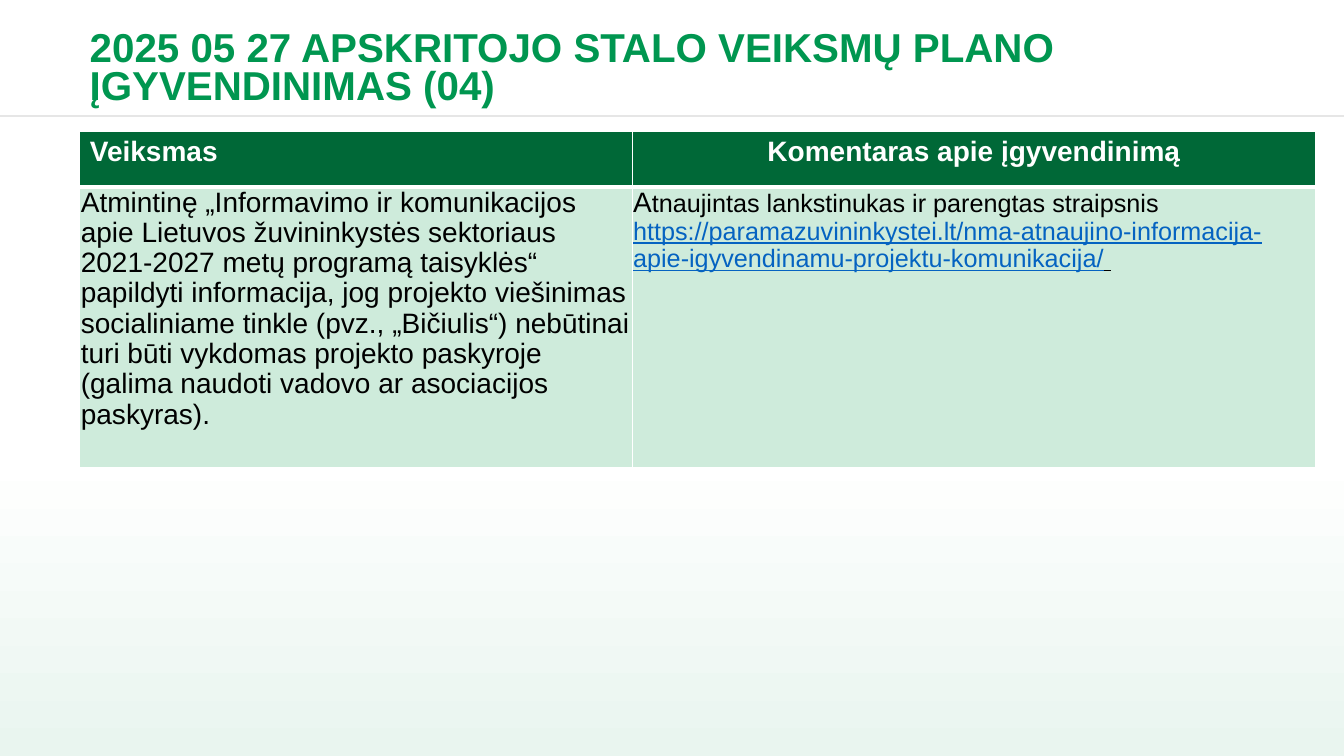
from dataclasses import dataclass

from lxml.etree import SubElement
from pptx import Presentation
from pptx.dml.color import RGBColor as RGB
from pptx.enum.shapes import MSO_CONNECTOR as CONN, MSO_SHAPE as SHAPE
from pptx.enum.text import MSO_ANCHOR as ANCHOR, PP_ALIGN as ALIGN
from pptx.oxml import parse_xml
from pptx.oxml.ns import nsdecls, qn
from pptx.util import Pt


@dataclass(frozen=True)
class Theme:
    font: str = "Arial"
    title: RGB = RGB(0x00, 0x96, 0x50)
    header: RGB = RGB(0x00, 0x68, 0x37)
    body: RGB = RGB(0xCE, 0xEB, 0xDB)
    tint: RGB = RGB(0xE9, 0xF5, 0xEF)
    rule: RGB = RGB(0xE6, 0xE6, 0xE6)
    link: RGB = RGB(0x05, 0x63, 0xC1)
    black: RGB = RGB(0, 0, 0)
    white: RGB = RGB(0xFF, 0xFF, 0xFF)
    title_size: float = 28.8
    text_size: float = 20
    note_size: float = 18


T = Theme()
WIDTH, HEIGHT = 960, 540

TITLE = "2025 05 27 APSKRITOJO STALO VEIKSMŲ PLANO ĮGYVENDINIMAS (04)"
HEADERS = [("Veiksmas", ALIGN.LEFT), ("Komentaras apie įgyvendinimą", ALIGN.CENTER)]
ACTION = (
    "Atmintinę „Informavimo ir komunikacijos apie Lietuvos žuvininkystės "
    "sektoriaus 2021-2027 metų programą taisyklės“ papildyti informacija, jog "
    "projekto viešinimas socialiniame tinkle (pvz., „Bičiulis“) nebūtinai turi "
    "būti vykdomas projekto paskyroje (galima naudoti vadovo ar asociacijos "
    "paskyras)."
)
URL = ("https://paramazuvininkystei.lt/nma-atnaujino-informacija-"
       "apie-igyvendinamu-projektu-komunikacija/")
# Each run: text, size, colour, underline
COMMENT = [
    ("A", T.text_size, T.black, False),
    ("tnaujintas lankstinukas ir parengtas straipsnis ", T.note_size, T.black, False),
    (URL, T.note_size, T.link, True),
    (" ", T.note_size, T.black, True),
]


def set_font(font, size, color, bold=False):
    font.name, font.size, font.bold = T.font, Pt(size), bold
    font.color.rgb = color


def add_backdrop(slide, x, y, w, h, rule_y):
    # Tint rising from the bottom edge
    sp = slide.shapes.add_shape(SHAPE.RECTANGLE, Pt(x), Pt(y), Pt(w), Pt(h))
    sp.shadow.inherit = False
    sp.line.fill.background()
    sp.fill.gradient()
    sp.fill.gradient_angle = 90
    for stop, color, pos in zip(sp.fill.gradient_stops, (T.tint, T.white), (0, 0.4)):
        stop.color.rgb = color
        stop.position = pos

    # Rule under the title
    rule = slide.shapes.add_connector(
        CONN.STRAIGHT, Pt(x), Pt(y + rule_y), Pt(x + w), Pt(y + rule_y))
    rule.line.color.rgb = T.rule
    rule.line.width = Pt(1)
    SubElement(rule._element.spPr, qn("a:effectLst"))


def add_title(slide, x, y, w, h):
    tf = slide.shapes.add_textbox(Pt(x), Pt(y), Pt(w), Pt(h)).text_frame
    tf.word_wrap = True
    tf.vertical_anchor = ANCHOR.MIDDLE
    p = tf.paragraphs[0]
    p.text = TITLE
    p.line_spacing = 0.8
    set_font(p.font, T.title_size, T.title, bold=True)


def style_cell(cell, fill, bottom=1):
    cell.fill.solid()
    cell.fill.fore_color.rgb = fill
    tcPr = cell._tc.get_or_add_tcPr()
    for i, (side, width) in enumerate(zip("LRTB", (1, 1, 1, bottom))):
        tcPr.insert(i, parse_xml(
            f'<a:ln{side} {nsdecls("a")} w="{Pt(width)}"><a:solidFill>'
            f'<a:srgbClr val="{T.white}"/></a:solidFill></a:ln{side}>'))


def add_action_table(slide, x, y, col_widths, row_heights):
    table = slide.shapes.add_table(
        len(row_heights), len(col_widths), Pt(x), Pt(y),
        Pt(sum(col_widths)), Pt(sum(row_heights))).table
    for col, width in zip(table.columns, col_widths):
        col.width = Pt(width)
    for row, height in zip(table.rows, row_heights):
        row.height = Pt(height)

    # Header row
    for c, (text, align) in enumerate(HEADERS):
        cell = table.cell(0, c)
        style_cell(cell, T.header, bottom=3)
        p = cell.text_frame.paragraphs[0]
        p.text, p.alignment = text, align
        set_font(p.font, T.text_size, T.white, bold=True)

    # Body row
    action, comment = table.cell(1, 0), table.cell(1, 1)
    for cell in (action, comment):
        style_cell(cell, T.body)
        cell.margin_left = cell.margin_right = cell.margin_top = Pt(0.75)
        cell.margin_bottom = 0
        cell.text_frame.paragraphs[0].line_spacing = 0.97
    p = action.text_frame.paragraphs[0]
    p.add_run().text = ACTION
    set_font(p.font, T.text_size, T.black)
    p = comment.text_frame.paragraphs[0]
    for text, size, color, underline in COMMENT:
        r = p.add_run()
        r.text = text
        set_font(r.font, size, color)
        r.font.underline = underline


def main():
    prs = Presentation()
    prs.slide_width, prs.slide_height = Pt(WIDTH), Pt(HEIGHT)
    slide = prs.slides.add_slide(prs.slide_layouts[6])
    add_backdrop(slide, 0, 0, WIDTH, HEIGHT, rule_y=82.8)
    add_title(slide, 57, 17, 769, 66)
    add_action_table(slide, 57, 94, (394.5, 488.5), (39.5, 200.5))
    prs.save("out.pptx")


if __name__ == "__main__":
    main()
